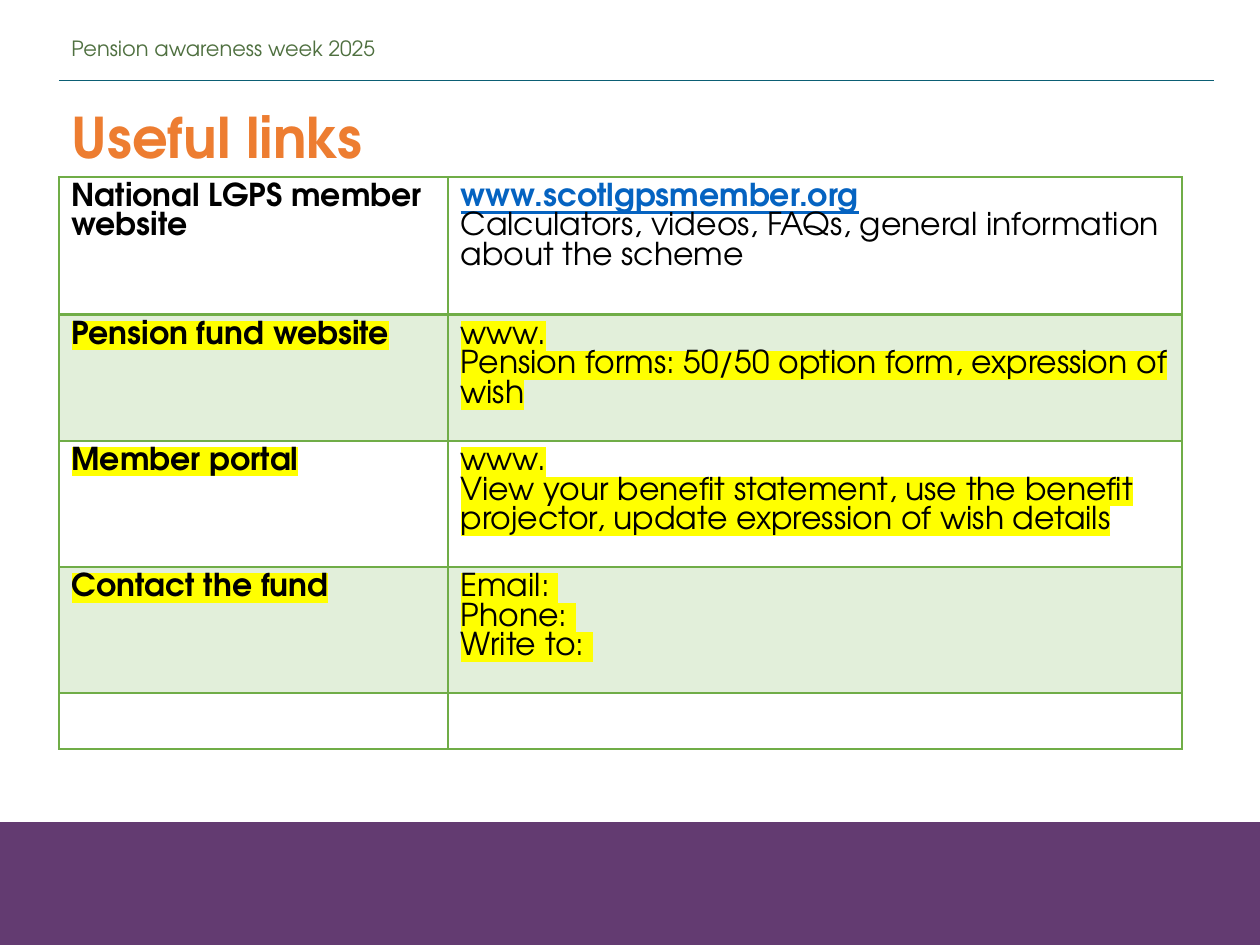
from lxml.etree import SubElement
from pptx import Presentation
from pptx.dml.color import RGBColor
from pptx.enum.shapes import MSO_CONNECTOR as Connector, MSO_SHAPE as Shape
from pptx.enum.text import MSO_ANCHOR as Anchor, MSO_AUTO_SIZE as AutoSize, PP_ALIGN as Align
from pptx.oxml import parse_xml
from pptx.oxml.ns import nsdecls, qn
from pptx.util import Emu, Pt

FONT = "TeX Gyre Adventor"
GREEN = "70AD47"
PALE_GREEN = "E2EFDA"
YELLOW = "FFFF00"


def px(value):
    return Emu(round(value * 914400 / 126))


def color(value):
    return RGBColor.from_string(value)


def add_text(para, text, size=18, fill="000000", bold=False, underline=None, highlight=None):
    span = para.add_run()
    span.text = text
    font = span.font
    font.size = Pt(size)
    font.bold = bold
    font.underline = underline
    font.color.rgb = color(fill)
    font.name = FONT
    if highlight:
        mark = parse_xml(
            f'<a:highlight {nsdecls("a")}><a:srgbClr val="{highlight}"/></a:highlight>'
        )
        font.fill._xPr.find(qn("a:solidFill")).addnext(mark)


def add_border(cell, side, width):
    properties = cell._tc.get_or_add_tcPr()
    properties.append(parse_xml(
        f'<a:ln{side} {nsdecls("a")} w="{Pt(width)}"><a:solidFill>'
        f'<a:srgbClr val="{GREEN}"/></a:solidFill></a:ln{side}>'
    ))


class SlideBuilder:
    def __init__(self, page):
        self.page = page

    def band(self, left, top, width, height, fill):
        box = self.page.shapes.add_shape(
            Shape.RECTANGLE, px(left), px(top), px(width), px(height)
        )
        box.shadow.inherit = False
        box.fill.solid()
        box.fill.fore_color.rgb = color(fill)
        box.line.color.rgb = color(fill)
        box.line.width = Pt(1)

    def rule(self, left, right, top, fill):
        line = self.page.shapes.add_connector(
            Connector.STRAIGHT, px(left), px(top), px(right), px(top)
        )
        line.line.color.rgb = color(fill)
        line.line.width = Pt(0.5)
        SubElement(line._element.spPr, qn("a:effectLst"))

    def label(self, left, top, width, height, text, **style):
        box = self.page.shapes.add_textbox(px(left), px(top), px(width), px(height))
        frame = box.text_frame
        frame.word_wrap = True
        frame.vertical_anchor = Anchor.MIDDLE
        para = frame.paragraphs[0]
        para.line_spacing = 0.9
        add_text(para, text, **style)

    def title(self, left, top, width, height, text, **style):
        box = self.page.shapes.title
        box.left, box.top, box.width, box.height = map(px, (left, top, width, height))
        frame = box.text_frame
        frame.word_wrap = True
        frame.auto_size = AutoSize.NONE
        frame.vertical_anchor = Anchor.MIDDLE
        para = frame.paragraphs[0]
        para.alignment = Align.LEFT
        add_text(para, text, **style)

    def table(self, left, top, widths, heights, rows):
        table = self.page.shapes.add_table(
            len(heights), len(widths), px(left), px(top), px(sum(widths)), px(sum(heights))
        ).table
        table.first_row = table.horz_banding = False
        for column, width in zip(table.columns, widths):
            column.width = px(width)
        for index, (row, height, contents) in enumerate(zip(table.rows, heights, rows)):
            row.height = px(height)
            for cell, lines in zip(row.cells, contents):
                self.cell(cell, index, lines)

    def cell(self, cell, index, lines):
        widths = {"L": 1, "R": 1, "T": 2 if index == 1 else 1, "B": 2 if index == 0 else 1}
        for side, width in widths.items():
            add_border(cell, side, width)
        if index % 2:
            cell.fill.solid()
            cell.fill.fore_color.rgb = color(PALE_GREEN)
        else:
            cell.fill.background()
        frame = cell.text_frame
        for number, (text, style) in enumerate(lines):
            para = frame.add_paragraph() if number else frame.paragraphs[0]
            add_text(para, text, **style)


def marked_row(heading, *details):
    return (
        [(heading, {"bold": True, "highlight": YELLOW})],
        [(detail, {"highlight": YELLOW}) for detail in details],
    )


def main():
    deck = Presentation()
    deck.slide_width, deck.slide_height = px(1260), px(945)
    slide = SlideBuilder(deck.slides.add_slide(deck.slide_layouts[5]))

    slide.band(0, 823, 1260, 122, "633B71")
    slide.rule(59, 1214, 80, "0B5E74")
    slide.label(59, 34, 820, 32, "Pension awareness week 2025", size=12, fill="4F7040")
    slide.title(59, 96, 1176, 80, "Useful links", size=32, fill="ED7D31", bold=True)

    rows = [
        (
            [("National LGPS member website", {"bold": True})],
            [
                ("www.scotlgpsmember.org", {"bold": True, "fill": "0563C1", "underline": True}),
                ("Calculators, videos, FAQs, general information about the scheme", {}),
            ],
        ),
        marked_row(
            "Pension fund website",
            "www.",
            "Pension forms: 50/50 option form, expression of wish",
        ),
        marked_row(
            "Member portal",
            "www.",
            "View your benefit statement, use the benefit projector, update expression of wish details",
        ),
        marked_row("Contact the fund", "Email: ", "Phone: ", "Write to: "),
        ([], []),
    ]
    slide.table(59, 177, [389, 734], [138, 126, 126, 126, 56], rows)
    deck.save("out.pptx")


if __name__ == "__main__":
    main()
